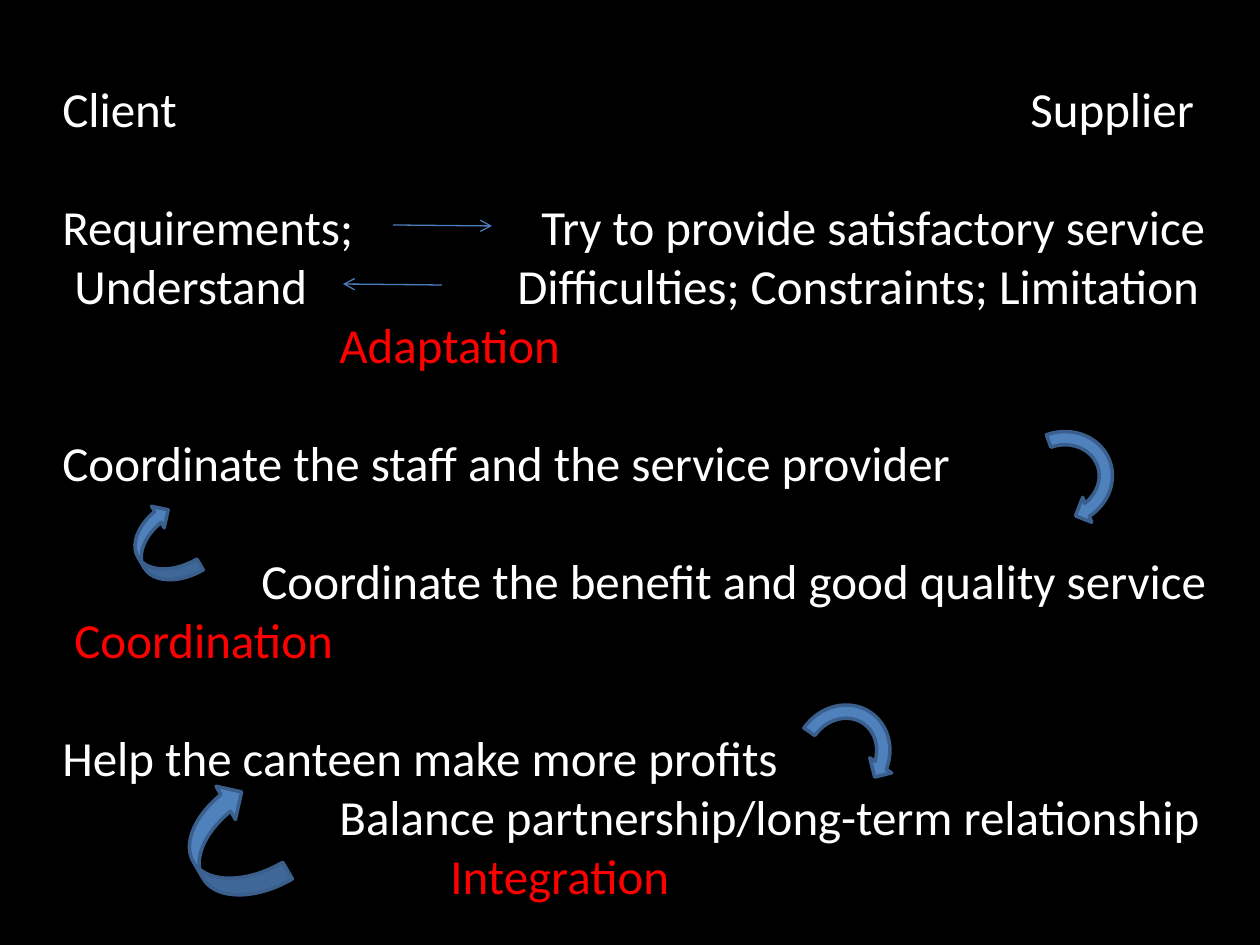
from lxml.etree import SubElement
from pptx import Presentation
from pptx.dml.color import RGBColor
from pptx.enum.shapes import MSO_CONNECTOR, MSO_SHAPE
from pptx.oxml.ns import qn
from pptx.util import Emu, Pt

WHITE, RED, BLUE, EDGE, LINE = "FFFFFF", "FF0000", "4F81BD", "3A5F8C", "4B7EBC"


def px(n):
    """Turn px into EMU."""
    return Emu(round(n * 914400 / 126))


def rgb(color):
    """Turn a hex string into a colour."""
    return RGBColor.from_string(color)


class Deck:
    """Hold the style and the current slide."""

    def __init__(self, width, height, background, font, size):
        """Start a deck with one blank slide."""
        self.prs = Presentation()
        self.prs.slide_width, self.prs.slide_height = px(width), px(height)
        self.s = self.prs.slides.add_slide(self.prs.slide_layouts[6])
        self.s.background.fill.solid()
        self.s.background.fill.fore_color.rgb = rgb(background)
        self.font, self.size = font, size

    def text(self, x, y, w, h, lines, gap):
        """Add lines of (blank line before, parts of (tab stop, text, colour))."""
        tf = self.s.shapes.add_textbox(px(x), px(y), px(w), px(h)).text_frame
        tf.word_wrap = True
        for i, (spaced, parts) in enumerate(lines):
            p = tf.paragraphs[0] if i == 0 else tf.add_paragraph()
            p.space_before = Pt(gap if spaced else 0)
            tabs = SubElement(p._p.get_or_add_pPr(), qn("a:tabLst"))
            for stop, text, color in parts:
                if stop:
                    SubElement(tabs, qn("a:tab"), pos=str(px(stop)), algn="l")
                r = p.add_run()
                r.text = "\t" + text if stop else text
                r.font.name, r.font.size = self.font, Pt(self.size)
                r.font.color.rgb = rgb(color)

    def arrow(self, x1, y1, x2, y2):
        """Add a thin line with an open arrowhead at its end."""
        c = self.s.shapes.add_connector(
            MSO_CONNECTOR.STRAIGHT, px(x1), px(y1), px(x2), px(y2))
        c.line.color.rgb, c.line.width = rgb(LINE), Pt(0.75)
        SubElement(c.line._get_or_add_ln(), qn("a:tailEnd"), type="arrow")
        SubElement(c._element.spPr, qn("a:effectLst"))

    def curve(self, kind, x, y, w, h, rotation):
        """Add a rotated block arrow."""
        sp = self.s.shapes.add_shape(kind, px(x), px(y), px(w), px(h))
        sp.rotation = rotation
        sp.shadow.inherit = False
        sp.fill.solid()
        sp.fill.fore_color.rgb = rgb(BLUE)
        sp.line.color.rgb, sp.line.width = rgb(EDGE), Pt(2)


def main():
    """Build the client and supplier slide."""
    deck = Deck(1260, 945, "000000", "Calibri", 28)
    deck.text(50, 72, 1176, 844, [
        (False, [(0, "Client", WHITE), (968, "Supplier", WHITE)]),
        (True, [(0, "Requirements;", WHITE),
                (479, "Try to provide satisfactory service", WHITE)]),
        (False, [(12, "Understand", WHITE),
                 (455, "Difficulties; Constraints; Limitation", WHITE)]),
        (False, [(277, "Adaptation", RED)]),
        (True, [(0, "Coordinate the staff and the service provider", WHITE)]),
        (True, [(199, "Coordinate the benefit and good quality service", WHITE)]),
        (False, [(12, "Coordination", RED)]),
        (True, [(0, "Help the canteen make more profits", WHITE)]),
        (False, [(277, "Balance partnership/long-term relationship", WHITE)]),
        (False, [(388, "Integration", RED)]),
    ], gap=34)
    deck.arrow(393, 225, 492, 226)
    deck.arrow(442, 285, 343, 284)
    for x, y, rotation in ((1009, 421, 70.3), (789, 697, 34.8)):
        deck.curve(MSO_SHAPE.CIRCULAR_ARROW, x, y, 106, 115, rotation)
    for x, y, w, h in ((169, 808, 120, 77), (120, 522, 82, 50)):
        deck.curve(MSO_SHAPE.CURVED_DOWN_ARROW, x, y, w, h, 239.7)
    deck.prs.save("out.pptx")


if __name__ == "__main__":
    main()
